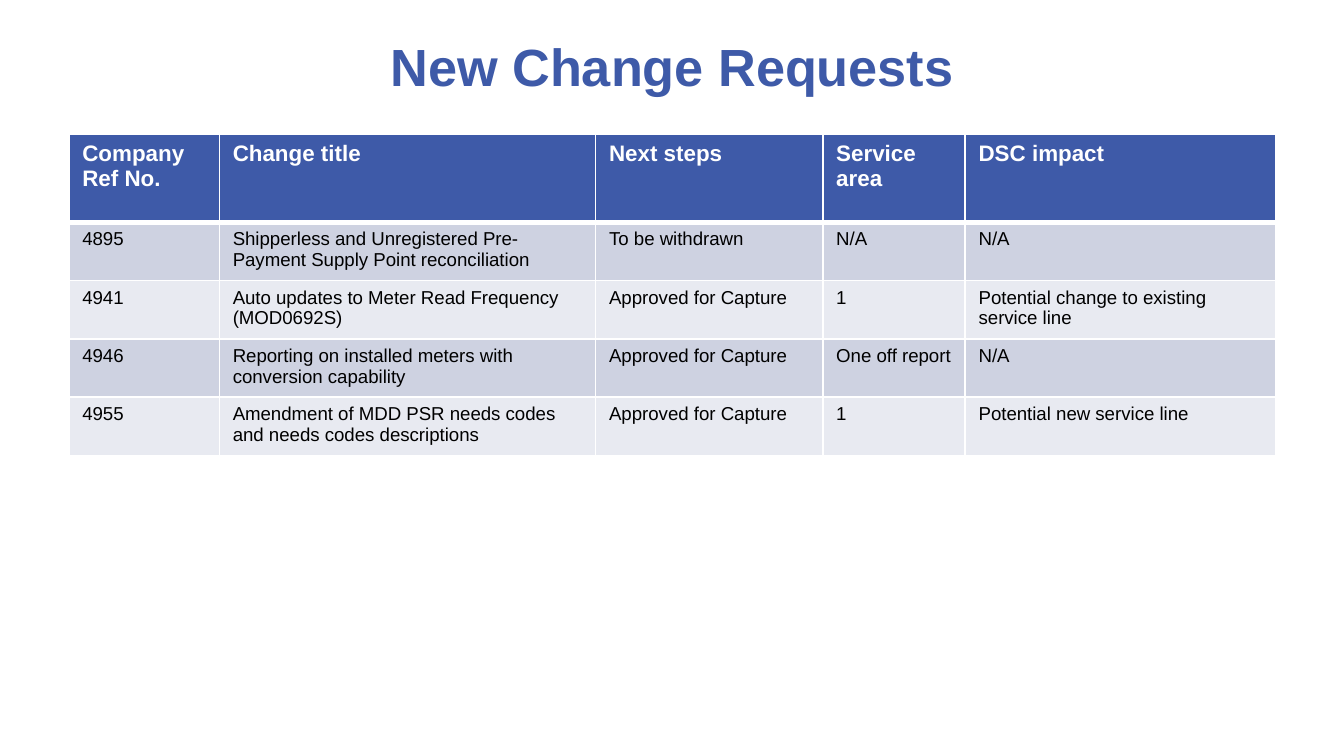
"""Build a slide that lists new change requests in a table."""
from lxml import etree
from pptx import Presentation
from pptx.dml.color import RGBColor
from pptx.enum.text import MSO_ANCHOR, PP_ALIGN
from pptx.oxml.ns import qn
from pptx.util import Pt

CENTER = PP_ALIGN.CENTER
MIDDLE = MSO_ANCHOR.MIDDLE

TITLE = "New Change Requests"
HEADINGS = ("Company Ref No.", "Change title", "Next steps", "Service area", "DSC impact")
REQUESTS = [
    ("4895", "Shipperless and Unregistered Pre-Payment Supply Point reconciliation",
     "To be withdrawn", "N/A", "N/A"),
    ("4941", "Auto updates to Meter Read Frequency (MOD0692S)",
     "Approved for Capture", "1", "Potential change to existing service line"),
    ("4946", "Reporting on installed meters with conversion capability",
     "Approved for Capture", "One off report", "N/A"),
    ("4955", "Amendment of MDD PSR needs codes and needs codes descriptions",
     "Approved for Capture", "1", "Potential new service line"),
]

FONT = "Arial"
BLUE, WHITE, BLACK = "3E5AA8", "FFFFFF", "000000"
BANDS = ("CED2E1", "E8EAF1")
COLUMN_WIDTHS = (80.6, 201.6, 121.7, 76.3, 166.3)
HEADING_HEIGHT, REQUEST_HEIGHT = 47, 29.6
THIN, THICK = 1, 3


def color(value):
    return RGBColor.from_string(value)


def set_font(paragraph, size, value, bold):
    font = paragraph.font
    font.name, font.size, font.bold = FONT, Pt(size), bold
    font.color.rgb = color(value)


def set_borders(cell, top, bottom):
    properties = cell._tc.get_or_add_tcPr()
    for side, width in (("L", THIN), ("R", THIN), ("T", top), ("B", bottom)):
        line = etree.SubElement(properties, qn(f"a:ln{side}"), w=str(Pt(width)))
        fill = etree.SubElement(line, qn("a:solidFill"))
        etree.SubElement(fill, qn("a:srgbClr"), val=WHITE)


def add_title(slide):
    title = slide.shapes.add_textbox(Pt(36), Pt(10), Pt(648), Pt(50.4)).text_frame
    title.word_wrap = True
    title.vertical_anchor = MIDDLE
    title.text = TITLE
    title.paragraphs[0].alignment = CENTER
    set_font(title.paragraphs[0], 28, BLUE, True)


def add_requests(slide):
    rows = [HEADINGS, *REQUESTS]
    heights = [HEADING_HEIGHT] + [REQUEST_HEIGHT] * len(REQUESTS)
    table = slide.shapes.add_table(
        len(rows), len(HEADINGS), Pt(36.9), Pt(72),
        Pt(sum(COLUMN_WIDTHS)), Pt(sum(heights))).table
    for column, width in zip(table.columns, COLUMN_WIDTHS):
        column.width = Pt(width)
    for index, (texts, height) in enumerate(zip(rows, heights)):
        table.rows[index].height = Pt(height)
        heading = index == 0
        background = BLUE if heading else BANDS[(index - 1) % 2]
        size, ink = (12, WHITE) if heading else (10, BLACK)
        for cell, text in zip(table.rows[index].cells, texts):
            cell.text = text
            set_font(cell.text_frame.paragraphs[0], size, ink, heading)
            set_borders(cell, THICK if index == 1 else THIN, THICK if heading else THIN)
            cell.fill.solid()
            cell.fill.fore_color.rgb = color(background)


def main():
    deck = Presentation()
    deck.slide_width, deck.slide_height = Pt(720), Pt(405)
    slide = deck.slides.add_slide(deck.slide_layouts[6])
    add_title(slide)
    add_requests(slide)
    deck.save("out.pptx")


if __name__ == "__main__":
    main()
